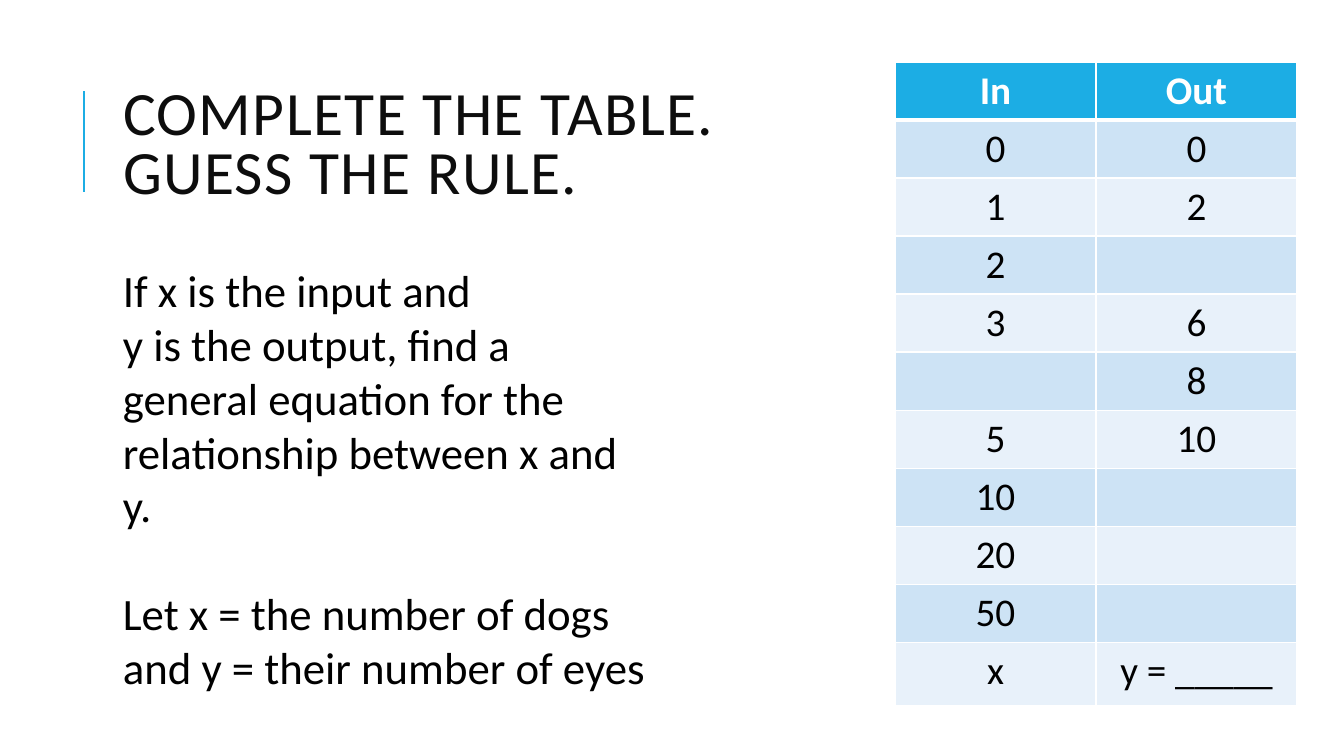
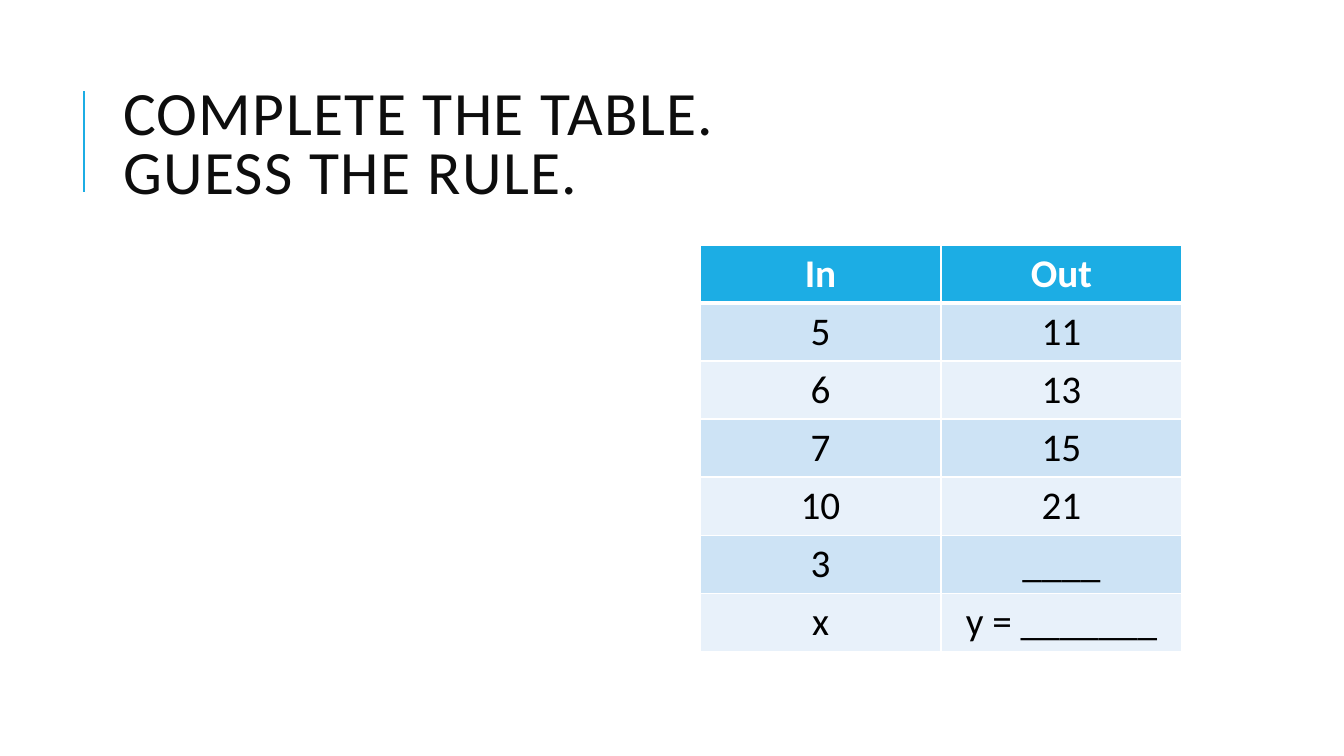
from dataclasses import dataclass
from typing import Any

from lxml.etree import SubElement
from pptx import Presentation
from pptx.dml.color import RGBColor
from pptx.enum.shapes import MSO_CONNECTOR
from pptx.enum.text import MSO_ANCHOR, MSO_AUTO_SIZE, PP_ALIGN
from pptx.oxml.ns import qn
from pptx.presentation import Presentation as Deck
from pptx.slide import Slide
from pptx.util import Emu, Pt

SLIDE_WIDTH, SLIDE_HEIGHT = 1344, 756
EMU_PER_PX = 12192000 / SLIDE_WIDTH
FONT = "Calibri"
ACCENT, INK, BLACK, WHITE = "1CADE4", "0D0D0D", "000000", "FFFFFF"
BANDS = ("CDE3F5", "E8F1FA")
TITLE = "COMPLETE THE TABLE.\vGUESS THE RULE."
TITLE_FONT = {"name": FONT, "size": Pt(44), "bold": False}
BODY_FONT = {"name": FONT, "size": Pt(32)}
HEADER_FONT = {"name": FONT, "size": Pt(28), "bold": True}
CELL_FONT = {**HEADER_FONT, "bold": False}
TITLE_PLACE = {"left": 113, "top": 65, "width": 1072, "height": 165}
TITLE_FRAME = {
    "word_wrap": True,
    "auto_size": MSO_AUTO_SIZE.NONE,
    "vertical_anchor": MSO_ANCHOR.MIDDLE,
}
TITLE_PARA = {"alignment": PP_ALIGN.LEFT, "line_spacing": 0.8}
RULE_X, RULE_TOP, RULE_BOTTOM = 84, 91, 192
ROW_HEIGHT = 58


@dataclass(frozen=True)
class InOutTable:
    """Place and contents of an input and output table."""

    left: int
    top: int
    column_width: int
    last_row_height: int
    rows: tuple[tuple[str, str], ...]


@dataclass(frozen=True)
class BodyLine:
    """One paragraph of the task text and the gap above it in points."""

    text: str
    gap: float = 0


@dataclass(frozen=True)
class Exercise:
    """One slide: its table and its task text."""

    table: InOutTable
    body: tuple[BodyLine, ...] = ()


EXERCISES = (
    Exercise(
        InOutTable(895, 62, 201, 63, (
            ("0", "0"), ("1", "2"), ("2", ""), ("3", "6"), ("", "8"),
            ("5", "10"), ("10", ""), ("20", ""), ("50", ""), ("x", "y = _____"),
        )),
        (
            BodyLine("If x is the input and"),
            BodyLine("y is the output, find a"),
            BodyLine("general equation for the"),
            BodyLine("relationship between x and y."),
            BodyLine("Let x = the number of dogs", 38.4),
            BodyLine("and y = their number of eyes"),
        ),
    ),
    Exercise(
        InOutTable(700, 245, 241, ROW_HEIGHT, (
            ("5", "11"), ("6", "13"), ("7", "15"), ("10", "21"),
            ("3", "____"), ("x", "y = _______"),
        )),
    ),
)


def px(length: int) -> Emu:
    """Turn pixels into EMU."""
    return Emu(round(length * EMU_PER_PX))


def color(value: str) -> RGBColor:
    """Turn a hex string into a colour."""
    return RGBColor.from_string(value)


def set_all(target: Any, values: dict[str, Any]) -> None:
    """Set every attribute named in the values."""
    for name, value in values.items():
        setattr(target, name, value)


def style_font(font: Any, values: dict[str, Any], ink: str) -> None:
    """Give a font its format and colour."""
    set_all(font, values)
    font.color.rgb = color(ink)


def add_title(page: Slide) -> None:
    """Place and format the title and the rule beside it."""
    title = page.shapes.title
    set_all(title, {name: px(value) for name, value in TITLE_PLACE.items()})
    frame = title.text_frame
    set_all(frame, TITLE_FRAME)
    frame.text = TITLE
    para = frame.paragraphs[0]
    set_all(para, TITLE_PARA)
    for span in para.runs:
        style_font(span.font, TITLE_FONT, INK)
        span.font._element.set("spc", "100")
    rule = page.shapes.add_connector(
        MSO_CONNECTOR.STRAIGHT, px(RULE_X), px(RULE_BOTTOM), px(RULE_X), px(RULE_TOP)
    )
    rule.line.width = Pt(1.5)
    rule.line.color.rgb = color(ACCENT)
    SubElement(rule._element.spPr, qn("a:effectLst"))


def add_body(page: Slide, lines: tuple[BodyLine, ...]) -> None:
    """Add the task text."""
    box = page.shapes.add_textbox(px(113), px(258), px(548), px(440))
    frame = box.text_frame
    frame.word_wrap = True
    for index, line in enumerate(lines):
        para = frame.add_paragraph() if index else frame.paragraphs[0]
        para.space_before = Pt(line.gap)
        span = para.add_run()
        span.text = line.text
        style_font(span.font, BODY_FONT, BLACK)


def add_border(cell: Any, side: str, width: int) -> None:
    """Draw one white cell border."""
    properties = cell._tc.get_or_add_tcPr()
    border = SubElement(properties, qn(f"a:ln{side}"), w=str(Pt(width)))
    fill = SubElement(border, qn("a:solidFill"))
    SubElement(fill, qn("a:srgbClr"), val=WHITE)


def fill_cell(cell: Any, text: str, row: int) -> None:
    """Format one cell as header or banded body."""
    header = row == 0
    widths = {"L": 1, "R": 1, "T": 3 if row == 1 else 1, "B": 3 if header else 1}
    for side, width in widths.items():
        add_border(cell, side, width)
    cell.fill.solid()
    cell.fill.fore_color.rgb = color(ACCENT if header else BANDS[(row - 1) % 2])
    cell.text = text
    para = cell.text_frame.paragraphs[0]
    para.alignment = PP_ALIGN.CENTER
    style_font(para.font, HEADER_FONT if header else CELL_FONT, WHITE if header else BLACK)
    for span in para.runs:
        style_font(span.font, HEADER_FONT if header else CELL_FONT, WHITE if header else BLACK)


def add_in_out_table(page: Slide, data: InOutTable) -> None:
    """Add the table with its header row."""
    rows = (("In", "Out"), *data.rows)
    heights = [ROW_HEIGHT] * len(data.rows) + [data.last_row_height]
    frame = page.shapes.add_table(
        len(rows), 2, px(data.left), px(data.top),
        px(2 * data.column_width), px(sum(heights)),
    )
    table = frame.table
    for column in table.columns:
        column.width = px(data.column_width)
    for index, (texts, height) in enumerate(zip(rows, heights)):
        table.rows[index].height = px(height)
        for column_index, text in enumerate(texts):
            fill_cell(table.cell(index, column_index), text, index)


def add_exercise(deck: Deck, exercise: Exercise) -> None:
    """Add one exercise slide."""
    page = deck.slides.add_slide(deck.slide_layouts.get_by_name("Title Only"))
    add_title(page)
    add_in_out_table(page, exercise.table)
    if exercise.body:
        add_body(page, exercise.body)


def main() -> None:
    """Build and save the deck."""
    deck = Presentation()
    set_all(deck, {"slide_width": px(SLIDE_WIDTH), "slide_height": px(SLIDE_HEIGHT)})
    for exercise in EXERCISES:
        add_exercise(deck, exercise)
    deck.save("out.pptx")


if __name__ == "__main__":
    main()
